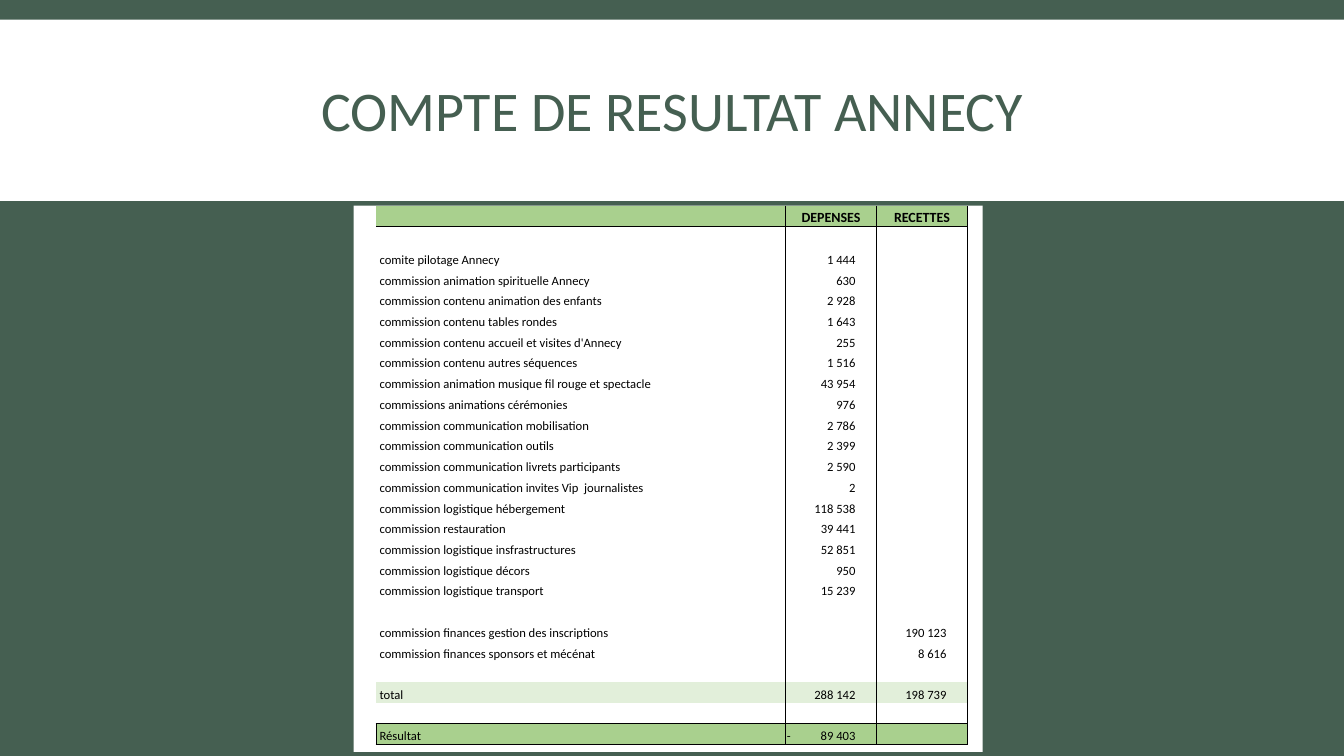
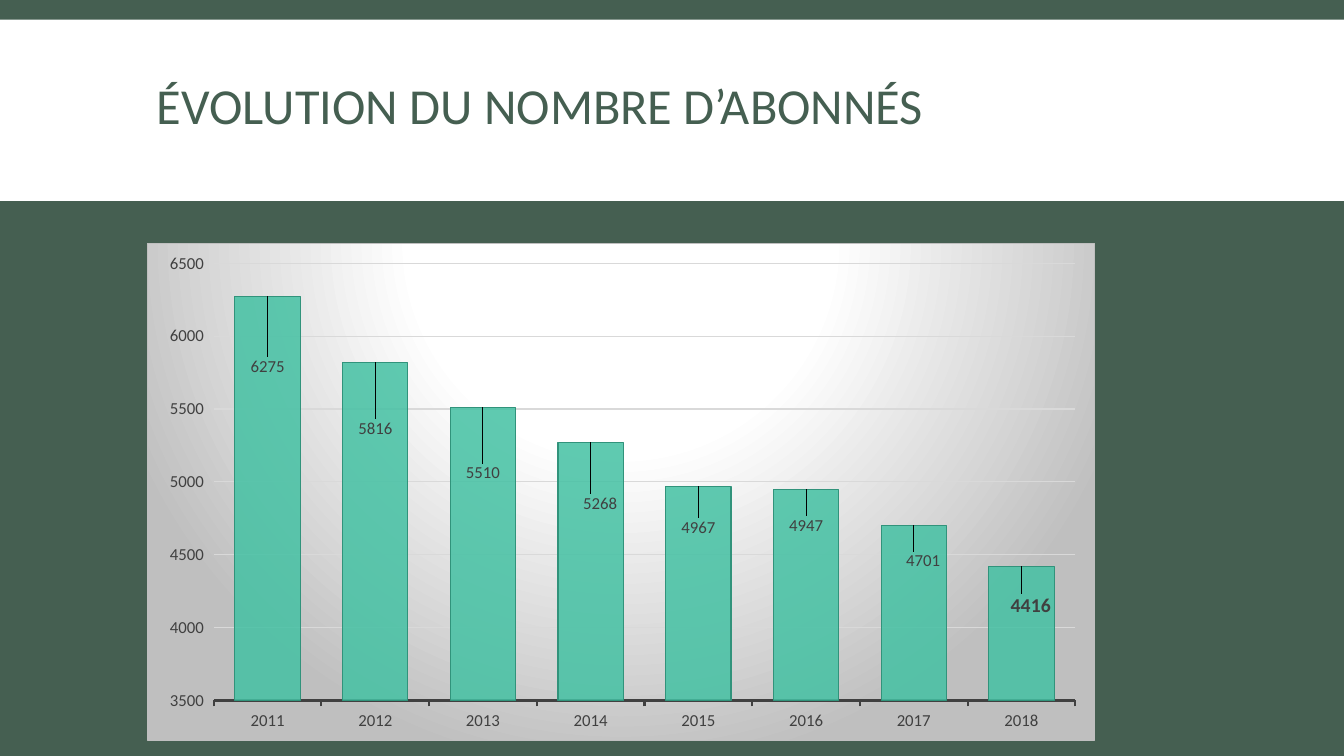
import lxml.etree
import pptx
import pptx.chart.data
import pptx.dml.color
import pptx.enum.chart
import pptx.enum.shapes
import pptx.enum.text
import pptx.oxml
import pptx.oxml.ns
import pptx.util

Pt = pptx.util.Pt
qn = pptx.oxml.ns.qn
ALIGN = pptx.enum.text.PP_ALIGN
ANCHOR = pptx.enum.text.MSO_ANCHOR
FONT = "Calibri"
COLORS = {
    "forest": "455F51", "white": "FFFFFF", "black": "000000",
    "header": "A9D08E", "total": "E2EFDA",
    "bar": "44C1A3", "bar_edge": "31937B", "label": "404040",
    "grid": "D9D9D9", "frame": "BFBFBF",
}
PAGE_SIZE = (960, 540)
BAND_BOX = (0, 14, 960, 129.6)

# Label, expenses, income
ACCOUNT_ROWS = [
    ("", "DEPENSES", "RECETTES"),
    ("", "", ""),
    ("comite pilotage Annecy", "1 444", ""),
    ("commission animation spirituelle Annecy", "630", ""),
    ("commission contenu animation des enfants", "2 928", ""),
    ("commission contenu tables rondes", "1 643", ""),
    ("commission contenu accueil et visites d'Annecy", "255", ""),
    ("commission contenu autres séquences", "1 516", ""),
    ("commission animation musique fil rouge et spectacle", "43 954", ""),
    ("commissions animations cérémonies", "976", ""),
    ("commission communication mobilisation", "2 786", ""),
    ("commission communication outils", "2 399", ""),
    ("commission communication livrets participants", "2 590", ""),
    ("commission communication invites Vip  journalistes", "2", ""),
    ("commission logistique hébergement", "118 538", ""),
    ("commission restauration", "39 441", ""),
    ("commission logistique insfrastructures", "52 851", ""),
    ("commission logistique décors", "950", ""),
    ("commission logistique transport", "15 239", ""),
    ("", "", ""),
    ("commission finances gestion des inscriptions", "", "190 123"),
    ("commission finances sponsors et mécénat", "", "8 616"),
    ("", "", ""),
    ("total", "288 142", "198 739"),
    ("", "", ""),
    ("Résultat", "-\t89 403", ""),
]
COLUMN_WIDTHS = (163.5, 129, 65, 65)
ROW_HEIGHT = 14.8
AMOUNT_INSET = 15
LONGEST_SINGLE_LABEL = 32

# Year, subscribers, label shift as fractions of the chart
SUBSCRIBERS = [
    ("2011", 6275, 0, 0.17), ("2012", 5816, 0, 0.16),
    ("2013", 5510, 0, 0.16), ("2014", 5268, 0.01, 0.15),
    ("2015", 4967, 0, 0.11), ("2016", 4947, 0, 0.1),
    ("2017", 4701, 0.01, 0.1), ("2018", 4416, 0.01, 0.11),
]


def rgb(name):
    return pptx.dml.color.RGBColor.from_string(COLORS[name])


def points(box):
    return [Pt(length) for length in box]


def write(frame, text, size=9, color="black", bold=False, align=ALIGN.LEFT,
          spacing=None, tab=None):
    para = frame.paragraphs[0]
    para.alignment = align
    if spacing:
        para.line_spacing = spacing
    if tab:
        tabs = lxml.etree.SubElement(para._p.get_or_add_pPr(), qn("a:tabLst"))
        lxml.etree.SubElement(tabs, qn("a:tab"), pos=str(Pt(tab)), algn="r")
    if not text:
        # Keeps an empty row at its height
        lxml.etree.SubElement(para._p, qn("a:endParaRPr"), sz=str(size * 100))
        return
    span = para.add_run()
    span.text = text
    style_font(span.font, size, color, bold)


def style_font(font, size, color, bold=False):
    font.name = FONT
    font.size = Pt(size)
    font.bold = bold
    font.color.rgb = rgb(color)


def style_line(line, color, width):
    line.color.rgb = rgb(color)
    line.width = Pt(width)


def add_panel(page, box):
    panel = page.shapes.add_shape(
        pptx.enum.shapes.MSO_SHAPE.RECTANGLE, *points(box))
    panel.shadow.inherit = False
    panel.fill.solid()
    panel.fill.fore_color.rgb = rgb("white")
    panel.line.fill.background()


def add_page(deck, title, box, size, align=ALIGN.LEFT):
    page = deck.slides.add_slide(deck.slide_layouts[6])
    page.background.fill.solid()
    page.background.fill.fore_color.rgb = rgb("forest")
    add_panel(page, BAND_BOX)
    frame = page.shapes.add_textbox(*points(box)).text_frame
    frame.word_wrap = True
    frame.vertical_anchor = ANCHOR.MIDDLE
    write(frame, title, size=size, color="forest", align=align, spacing=0.85)
    return page


def set_borders(cell, sides):
    properties = cell._tc.get_or_add_tcPr()
    for side in "LRTB":
        line = lxml.etree.SubElement(properties, qn("a:ln" + side), w=str(Pt(0.5)))
        if side in sides:
            fill = lxml.etree.SubElement(line, qn("a:solidFill"))
            lxml.etree.SubElement(fill, qn("a:srgbClr"), val=COLORS["black"])
        else:
            lxml.etree.SubElement(line, qn("a:noFill"))


def border_sides(row, column, span, last):
    sides = {
        "L": column >= 2 or (row == last and column == 0),
        "R": column + span > 1,
        "T": row in (1, last),
        "B": row in (0, last - 1, last),
    }
    return [side for side, drawn in sides.items() if drawn]


def format_cell(cell, text, row, column, last):
    set_borders(cell, border_sides(row, column, cell.span_width, last))
    fill = {0: "header", last: "header", last - 2: "total"}.get(row)
    if fill:
        cell.fill.solid()
        cell.fill.fore_color.rgb = rgb(fill)
    else:
        cell.fill.background()
    cell.vertical_anchor = ANCHOR.BOTTOM
    cell.margin_top = cell.margin_right = Pt(1)
    cell.margin_left = Pt(2.5 if column < 2 else 1)
    cell.margin_bottom = 0
    if row == 0:
        write(cell.text_frame, text, size=10, bold=True, align=ALIGN.CENTER)
    elif column < 2:
        write(cell.text_frame, text)
    elif "\t" in text:
        write(cell.text_frame, text, tab=COLUMN_WIDTHS[column] - AMOUNT_INSET - 1)
    else:
        cell.margin_right = Pt(AMOUNT_INSET)
        write(cell.text_frame, text, align=ALIGN.RIGHT)


def add_account_table(page, left, top):
    last = len(ACCOUNT_ROWS) - 1
    table = page.shapes.add_table(
        len(ACCOUNT_ROWS), len(COLUMN_WIDTHS),
        *points((left, top, sum(COLUMN_WIDTHS), ROW_HEIGHT * (last + 1)))).table
    table.first_row = table.horz_banding = False
    for column, width in zip(table.columns, COLUMN_WIDTHS):
        column.width = Pt(width)
    for row, (label, expense, income) in enumerate(ACCOUNT_ROWS):
        table.rows[row].height = Pt(ROW_HEIGHT)
        # Long labels take both label columns
        if len(label) > LONGEST_SINGLE_LABEL:
            table.cell(row, 0).merge(table.cell(row, 1))
        for column, text in enumerate((label, "", expense, income)):
            format_cell(table.cell(row, column), text, row, column, last)


def manual_layout(inner=False, **fractions):
    layout = lxml.etree.Element(qn("c:layout"))
    manual = lxml.etree.SubElement(layout, qn("c:manualLayout"))
    if inner:
        lxml.etree.SubElement(manual, qn("c:layoutTarget"), val="inner")
        for mode in ("xMode", "yMode"):
            lxml.etree.SubElement(manual, qn("c:" + mode), val="edge")
    for key, value in fractions.items():
        lxml.etree.SubElement(manual, qn("c:" + key), val=str(value))
    return layout


def paint_chart_frame(chart):
    stops = "".join(
        f'<a:gs pos="{position * 1000}"><a:srgbClr val="{COLORS[name]}"/></a:gs>'
        for position, name in ((0, "white"), (39, "white"), (100, "frame")))
    frame = pptx.oxml.parse_xml(
        f'<c:spPr {pptx.oxml.ns.nsdecls("c", "a")}>'
        f'<a:gradFill><a:gsLst>{stops}</a:gsLst><a:path path="circle">'
        '<a:fillToRect l="50000" t="-80000" r="50000" b="180000"/></a:path></a:gradFill>'
        f'<a:ln w="{Pt(0.75)}"><a:solidFill><a:srgbClr val="{COLORS["frame"]}"/>'
        '</a:solidFill></a:ln></c:spPr>')
    chart._chartSpace.find(qn("c:chart")).addnext(frame)


def style_axes(chart):
    years, counts = chart.category_axis, chart.value_axis
    for axis in (years, counts):
        style_font(axis.tick_labels.font, 12, "label")
        axis.major_tick_mark = pptx.enum.chart.XL_TICK_MARK.OUTSIDE
        axis.minor_tick_mark = pptx.enum.chart.XL_TICK_MARK.NONE
    style_line(years.format.line, "label", 1.5)
    counts.format.line.fill.background()
    counts.minimum_scale, counts.maximum_scale, counts.major_unit = 3500, 6500, 500
    counts.has_major_gridlines = True
    style_line(counts.major_gridlines.format.line, "grid", 0.75)


def style_bars(plot):
    plot.gap_width = 65
    plot.vary_by_categories = False
    bars = plot.series[0]
    bars.format.fill.solid()
    bars.format.fill.fore_color.rgb = rgb("bar")
    color = bars._element.find(".//" + qn("a:srgbClr"))
    lxml.etree.SubElement(color, qn("a:alpha"), val="85000")
    style_line(bars.format.line, "bar_edge", 0.75)
    # The latest year stands out
    for index, (_, _, across, down) in enumerate(SUBSCRIBERS):
        latest = index == len(SUBSCRIBERS) - 1
        label = bars.points[index].data_label
        style_font(label.font, 14 if latest else 12, "label", bold=latest)
        label.position = pptx.enum.chart.XL_LABEL_POSITION.OUTSIDE_END
        element = bars._element.findall(".//" + qn("c:dLbl"))[index]
        element.find(qn("c:idx")).addnext(manual_layout(x=across, y=down))


def add_subscriber_chart(page, box):
    data = pptx.chart.data.CategoryChartData()
    data.categories = [entry[0] for entry in SUBSCRIBERS]
    data.add_series("Series 1", [entry[1] for entry in SUBSCRIBERS])
    chart = page.shapes.add_chart(
        pptx.enum.chart.XL_CHART_TYPE.COLUMN_CLUSTERED, *points(box), data).chart
    chart.has_title = chart.has_legend = False
    style_font(chart.font, 10, "label")
    style_axes(chart)
    style_bars(chart.plots[0])
    area = chart._chartSpace.find(".//" + qn("c:plotArea"))
    for layout in area.findall(qn("c:layout")):
        area.remove(layout)
    area.insert(0, manual_layout(inner=True, x=0.07, y=0.04, w=0.91, h=0.88))
    paint_chart_frame(chart)


def main():
    deck = pptx.Presentation()
    deck.slide_width, deck.slide_height = points(PAGE_SIZE)

    # Income statement
    page = add_page(deck, "COMPTE DE RESULTAT ANNECY", (95, 22, 770, 119),
                    size=40, align=ALIGN.CENTER)
    add_panel(page, (252.7, 146.9, 449.3, 390.2))
    add_account_table(page, 268.6, 146.9)

    # Subscriber trend
    page = add_page(deck, "ÉVOLUTION DU NOMBRE D’ABONNÉS", (105, 48, 626, 60.5), size=36)
    add_subscriber_chart(page, (105, 173.5, 677, 355.7))

    deck.save("out.pptx")


if __name__ == "__main__":
    main()
